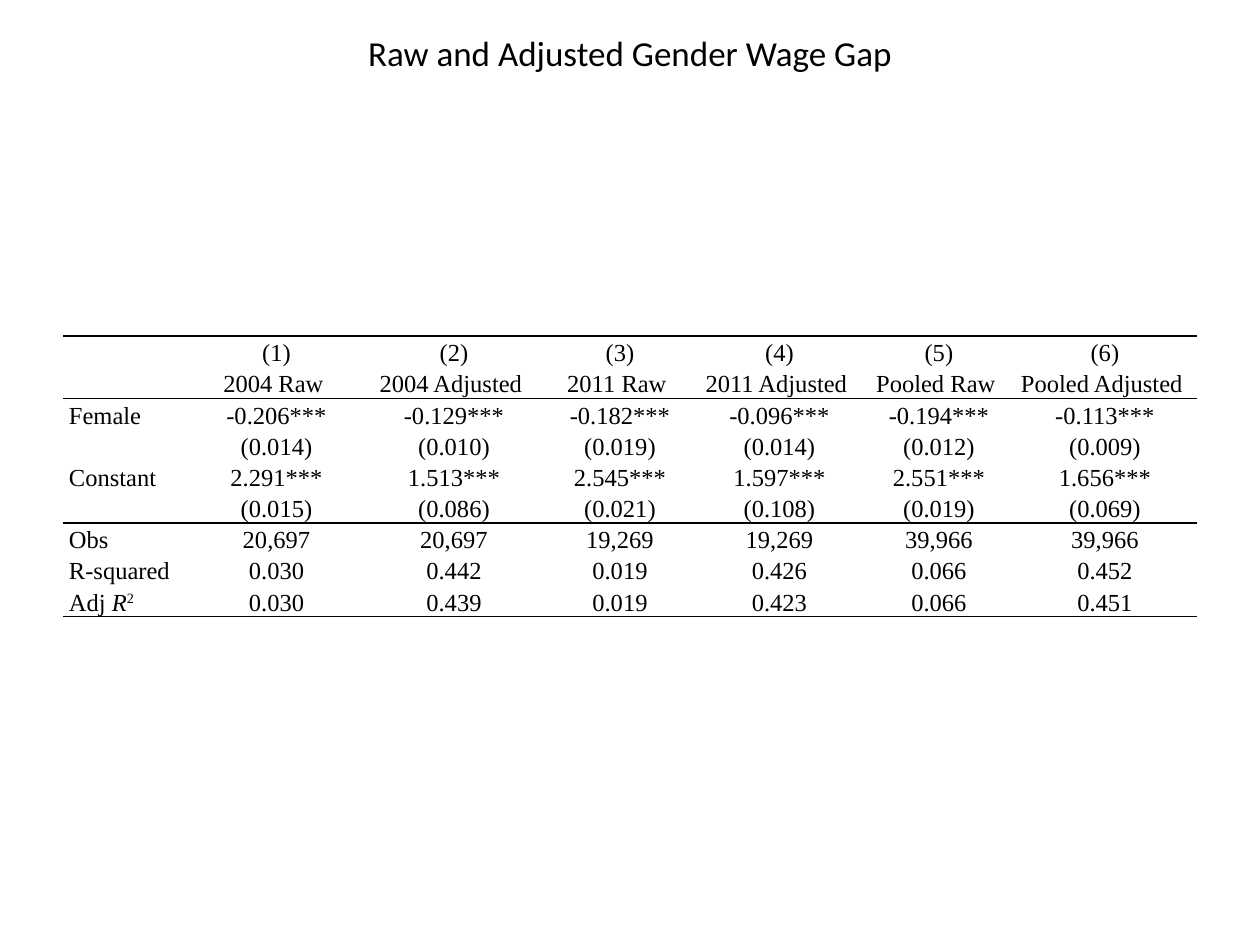
"""Build a slide with a regression table of the gender wage gap."""
import pptx
import pptx.util
import pptx.dml.color
import pptx.enum.text
import pptx.oxml
import pptx.oxml.ns
from lxml import etree

COLORS = {"ink": "000000", "page": "FFFFFF"}
ALIGN = pptx.enum.text.PP_ALIGN
PLAIN = "{2D5ABB26-0587-4C30-8999-92F81FD0307C}"
WIDTHS = [128, 171, 184, 148, 171, 148, 184]
HEIGHT = 31
RULED = {1, 5, 8}
ROWS = [
    ["", "(1)", "(2)", "(3)", "(4)", "(5)", "(6)"],
    ["", "2004 Raw ", "2004 Adjusted ", "2011 Raw ", "2011 Adjusted ",
     "Pooled Raw ", "Pooled Adjusted "],
    ["Female", "-0.206***", "-0.129***", "-0.182***", "-0.096***",
     "-0.194***", "-0.113***"],
    ["", "(0.014)", "(0.010)", "(0.019)", "(0.014)", "(0.012)", "(0.009)"],
    ["Constant", "2.291***", "1.513***", "2.545***", "1.597***",
     "2.551***", "1.656***"],
    ["", "(0.015)", "(0.086)", "(0.021)", "(0.108)", "(0.019)", "(0.069)"],
    ["Obs", "20,697", "20,697", "19,269", "19,269", "39,966", "39,966"],
    ["R-squared", "0.030", "0.442", "0.019", "0.426", "0.066", "0.452"],
    [[("Adj ", ""), ("R", "italic"), ("2", "super")],
     "0.030", "0.439", "0.019", "0.423", "0.066", "0.451"],
]


def qn(tag):
    return pptx.oxml.ns.qn(tag)


def px(count):
    return pptx.util.Emu(round(count * 914400 / 126))


class Deck:
    def __init__(self):
        self.prs = pptx.Presentation()
        self.prs.slide_width, self.prs.slide_height = px(1260), px(945)
        self.slide = self.prs.slides.add_slide(self.prs.slide_layouts[5])
        fill = self.slide.background.fill
        fill.solid()
        fill.fore_color.rgb = self.color("page")
        self.head, self.body = ("Calibri", 20), ("Times New Roman", 14)

    def color(self, name):
        return pptx.dml.color.RGBColor.from_string(COLORS[name])

    def run(self, para, text, style, kind=""):
        font = para.add_run()
        font.text = text
        font = font.font
        font.name, font.size = style[0], pptx.util.Pt(style[1])
        font.color.rgb = self.color("ink")
        if kind == "italic":
            font.italic = True
        if kind == "super":
            font._element.set("baseline", "30000")

    def title(self, text, left, top, width, height):
        shape = self.slide.shapes.title
        shape.left, shape.top = px(left), px(top)
        shape.width, shape.height = px(width), px(height)
        frame = shape.text_frame
        frame.vertical_anchor = pptx.enum.text.MSO_ANCHOR.MIDDLE
        para = frame.paragraphs[0]
        para.alignment = ALIGN.CENTER
        self.run(para, text, self.head)

    def rule(self, cell, side):
        line = pptx.oxml.parse_xml(
            f'<a:{side} {pptx.oxml.ns.nsdecls("a")} w="12700"><a:solidFill>'
            f'<a:srgbClr val="{COLORS["ink"]}"/></a:solidFill></a:{side}>')
        cell._tc.get_or_add_tcPr().insert(0, line)

    def cell(self, cell, text, align):
        cell.margin_left = cell.margin_right = px(6)
        cell.margin_top = cell.margin_bottom = 0
        cell.fill.background()
        para = cell.text_frame.paragraphs[0]
        para.alignment = align
        para.line_spacing = 1.15
        if not text:
            size = str(self.body[1] * 100)
            etree.SubElement(para._p, qn("a:endParaRPr"), sz=size)
            return
        runs = [(text, "")] if isinstance(text, str) else text
        for part, kind in runs:
            self.run(para, part, self.body, kind)

    def table(self, rows, left, top):
        frame = self.slide.shapes.add_table(
            len(rows), len(WIDTHS), px(left), px(top),
            px(sum(WIDTHS)), px(HEIGHT * len(rows)))
        table = frame.table
        table.first_row = table.horz_banding = False
        table._tbl.tblPr.find(qn("a:tableStyleId")).text = PLAIN
        for col, width in zip(table.columns, WIDTHS):
            col.width = px(width)
        for r, row in enumerate(rows):
            table.rows[r].height = px(HEIGHT)
            for c, text in enumerate(row):
                cell = table.cell(r, c)
                self.cell(cell, text, ALIGN.CENTER if c else ALIGN.LEFT)
                if r == 0:
                    self.rule(cell, "lnT")
                if r in RULED:
                    self.rule(cell, "lnB")


def main():
    deck = Deck()
    deck.title("Raw and Adjusted Gender Wage Gap", 63, 10, 1134, 84)
    deck.table(ROWS, 63, 336)
    deck.prs.save("out.pptx")


if __name__ == "__main__":
    main()
